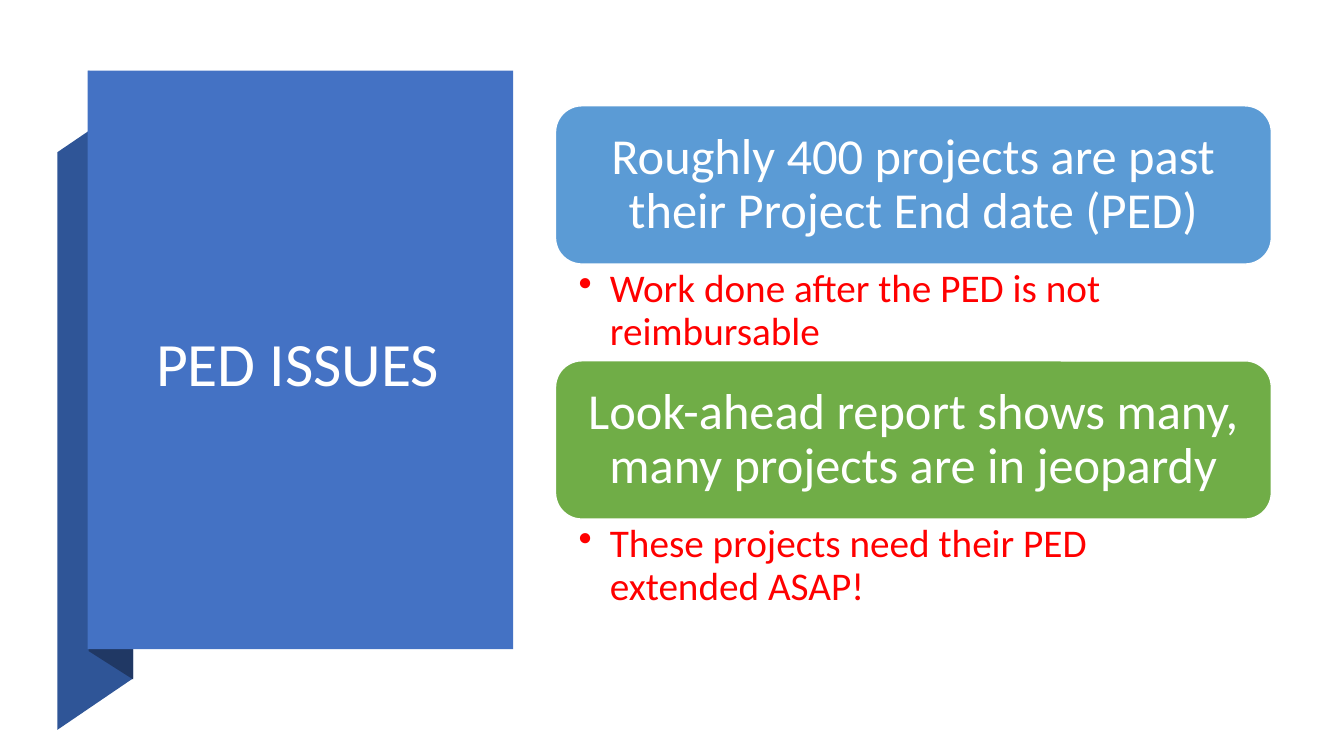
from lxml import etree
from pptx import Presentation
from pptx.dml.color import RGBColor
from pptx.enum import shapes, text
from pptx.oxml import ns
from pptx.util import Inches, Pt

TITLE = "PED ISSUES"
ISSUES = [
    ("Roughly 400 projects are past their Project End date (PED)",
     "Work done after the PED is not reimbursable", "blue"),
    ("Look-ahead report shows many, many projects are in jeopardy",
     "These projects need their PED extended ASAP!", "green"),
]
COLORS = {"side": "2F5597", "fold": "203864", "panel": "4472C4", "blue": "5B9BD5",
          "green": "70AD47", "white": "FFFFFF", "red": "FF0000"}
RIBBON = [
    ("side", [(0.57, 7.24), (1.32, 6.73), (1.32, 1), (0.57, 1.51)]),
    ("fold", [(0.88, 6.46), (1.32, 6.74), (1.32, 0.99), (0.88, 0.7)]),
]
PANEL = (0.87, 0.7, 4.22, 5.74)
TITLE_BOX = (1.45, 1.67, 3.14, 3.94)
LIST_LEFT, LIST_TOP, LIST_WIDTH = 5.51, 1.05, 7.1
HEAD_HEIGHT, NOTE_HEIGHT = 1.57, 0.96

FORMATS = {
    "title": {"size": 44, "color": "white", "align": text.PP_ALIGN.LEFT,
              "anchor": text.MSO_ANCHOR.MIDDLE, "insets": (0.1, 0.05, 0.1, 0.05)},
    "head": {"size": 36, "color": "white", "align": text.PP_ALIGN.CENTER,
             "anchor": text.MSO_ANCHOR.MIDDLE, "insets": (0.15, 0.15, 0.15, 0.15)},
    "note": {"size": 28, "color": "red", "align": text.PP_ALIGN.LEFT,
             "anchor": text.MSO_ANCHOR.TOP, "insets": (0.23, 0.05, 0.28, 0.05)},
}


def rgb(name):
    return RGBColor.from_string(COLORS[name])


def paint(sp, color, line=None):
    sp.shadow.inherit = False
    sp.fill.solid()
    sp.fill.fore_color.rgb = rgb(color)
    if line:
        sp.line.color.rgb = rgb(line)
        sp.line.width = Pt(1)
    else:
        sp.line.fill.background()


def write(sp, words, style):
    fmt = FORMATS[style]
    tf = sp.text_frame
    frame = {"word_wrap": True, "vertical_anchor": fmt["anchor"]}
    for side, inset in zip(("left", "top", "right", "bottom"), fmt["insets"]):
        frame["margin_" + side] = Inches(inset)
    p = tf.paragraphs[0]
    r = p.add_run()
    r.text = words
    for target, values in (
        (tf, frame),
        (p, {"alignment": fmt["align"], "line_spacing": 0.9}),
        (r.font, {"name": "Calibri", "size": Pt(fmt["size"])}),
    ):
        for key, value in values.items():
            setattr(target, key, value)
    r.font.color.rgb = rgb(fmt["color"])
    return p


def add_bullet(p):
    pPr = p._p.get_or_add_pPr()
    pPr.set("marL", str(Inches(0.31)))
    pPr.set("indent", str(Inches(-0.31)))
    etree.SubElement(pPr, ns.qn("a:buChar")).set("char", "•")


def main():
    prs = Presentation()
    prs.slide_width, prs.slide_height = Inches(13.33), Inches(7.5)
    shp = prs.slides.add_slide(prs.slide_layouts[6]).shapes

    for color, points in RIBBON:
        corners = [(Inches(x), Inches(y)) for x, y in points]
        outline = shp.build_freeform(*corners[0])
        outline.add_line_segments(corners[1:], close=True)
        paint(outline.convert_to_shape(), color)

    panel = shp.add_shape(shapes.MSO_SHAPE.RECTANGLE, *map(Inches, PANEL))
    paint(panel, "panel")
    write(shp.add_textbox(*map(Inches, TITLE_BOX)), TITLE, "title")

    for i, (head, note, color) in enumerate(ISSUES):
        top = LIST_TOP + i * (HEAD_HEIGHT + NOTE_HEIGHT)
        box = (LIST_LEFT, top, LIST_WIDTH, HEAD_HEIGHT)
        sp = shp.add_shape(shapes.MSO_SHAPE.ROUNDED_RECTANGLE, *map(Inches, box))
        paint(sp, color, "white")
        write(sp, head, "head")
        box = (LIST_LEFT, top + HEAD_HEIGHT, LIST_WIDTH, NOTE_HEIGHT)
        add_bullet(write(shp.add_textbox(*map(Inches, box)), note, "note"))

    prs.save("out.pptx")


if __name__ == "__main__":
    main()
